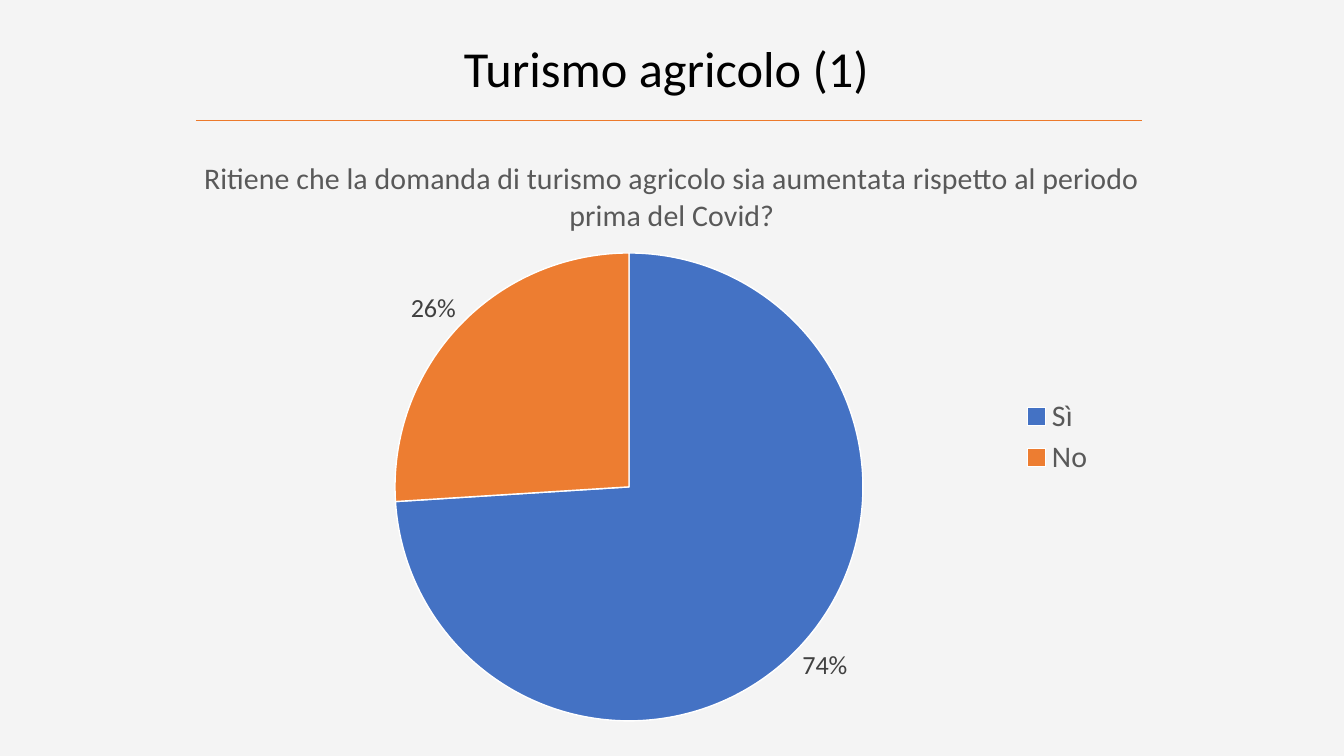
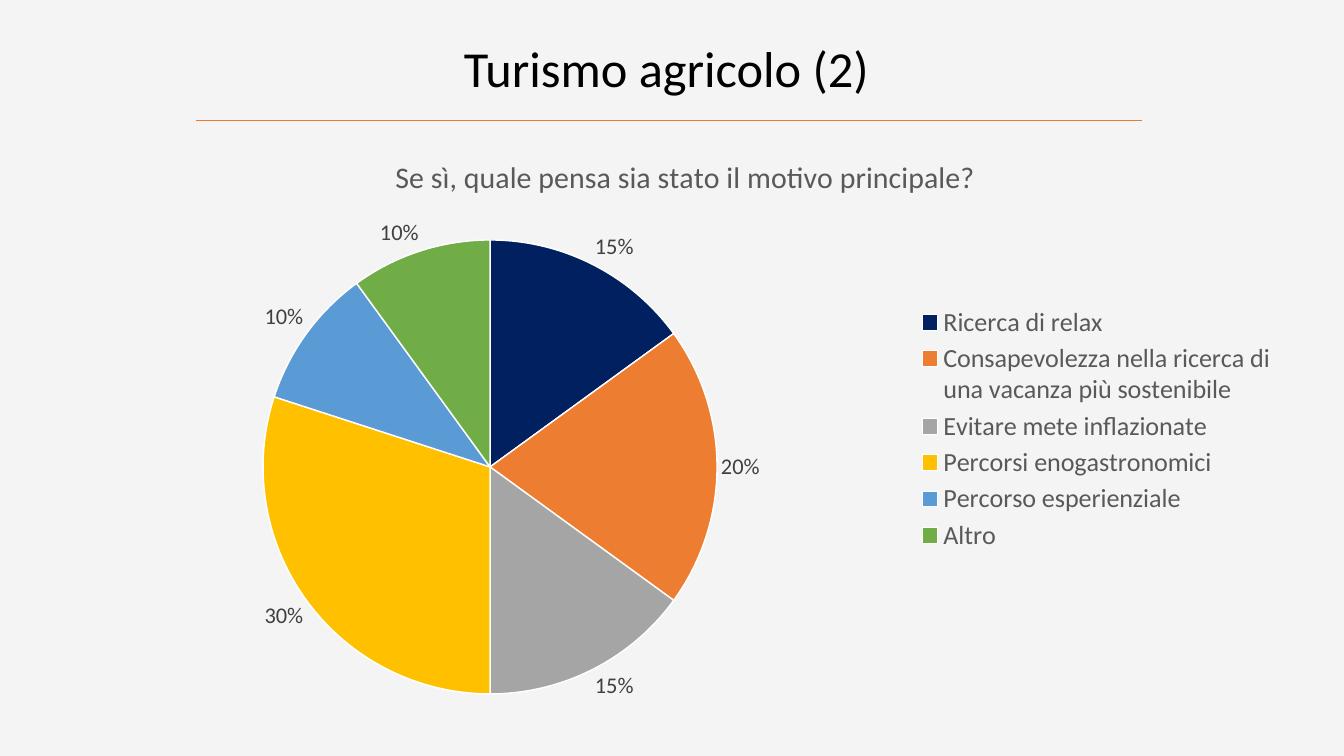
from lxml.etree import SubElement
from pptx import Presentation
from pptx.chart.data import CategoryChartData
from pptx.dml.color import RGBColor
from pptx.enum.chart import XL_CHART_TYPE as ChartType
from pptx.enum.chart import XL_LABEL_POSITION as LabelPosition
from pptx.enum.chart import XL_LEGEND_POSITION as LegendPosition
from pptx.enum.shapes import MSO_CONNECTOR as Connector
from pptx.enum.shapes import MSO_SHAPE as Shape
from pptx.enum.text import MSO_AUTO_SIZE as AutoSize
from pptx.enum.text import PP_ALIGN as Align
from pptx.oxml import parse_xml
from pptx.oxml.ns import nsdecls, qn
from pptx.util import Emu, Pt

SCALE = 914400 / 67.2
WIDTH, HEIGHT = 1344, 756
FONT = "Calibri"
BACKGROUND, PANEL, RULE = "F2F2F2", "F4F4F4", "EC792B"
BLACK, WHITE, TEXT_GREY, LABEL_GREY = "000000", "FFFFFF", "595959", "404040"
BLUE, ORANGE, NAVY = "4472C4", "ED7D31", "002060"
GREY, YELLOW, LIGHT_BLUE, GREEN = "A5A5A5", "FFC000", "5B9BD5", "70AD47"


def px(length):
    """Turn a length in px into EMU."""
    return Emu(round(length * SCALE))


def color(hex_string):
    """Turn a hex string into a colour."""
    return RGBColor.from_string(hex_string)


def style_font(font, size, hex_string):
    """Set typeface, size and colour of a font."""
    font.name = FONT
    font.size = Pt(size)
    font.bold = False
    font.color.rgb = color(hex_string)


def add_panel(slide):
    """Cover the slide with a light panel."""
    panel = slide.shapes.add_shape(Shape.RECTANGLE, 0, 0, px(WIDTH), px(HEIGHT))
    panel.shadow.inherit = False
    panel.fill.solid()
    panel.fill.fore_color.rgb = color(PANEL)
    panel.line.fill.background()


def add_title(slide, text):
    """Add the centred slide title."""
    box = slide.shapes.add_textbox(px(105), px(34), px(1123), px(68))
    frame = box.text_frame
    frame.word_wrap = True
    frame.auto_size = AutoSize.SHAPE_TO_FIT_TEXT
    frame.text = text
    paragraph = frame.paragraphs[0]
    paragraph.alignment = Align.CENTER
    style_font(paragraph.runs[0].font, 54, BLACK)


def add_rule(slide):
    """Add the thin line under the title."""
    rule = slide.shapes.add_connector(
        Connector.STRAIGHT, px(196), px(120), px(1142), px(120)
    )
    rule.line.color.rgb = color(RULE)
    rule.line.width = Pt(0.75)
    SubElement(rule._element.spPr, qn("a:effectLst"))


def set_layout(parent, index, area, frame, inner=False):
    """Place a chart part at a px area inside the chart frame."""
    for old_layout in parent.findall(qn("c:layout")):
        parent.remove(old_layout)
    layout = parse_xml(f"<c:layout {nsdecls('c')}/>")
    manual = SubElement(layout, qn("c:manualLayout"))
    left, top, width, height = area
    frame_left, frame_top, frame_width, frame_height = frame
    settings = {
        "xMode": "edge",
        "yMode": "edge",
        "x": round((left - frame_left) / frame_width, 4),
        "y": round((top - frame_top) / frame_height, 4),
        "w": round(width / frame_width, 4),
        "h": round(height / frame_height, 4),
    }
    if inner:
        settings = {"layoutTarget": "inner", **settings}
    for name, value in settings.items():
        SubElement(manual, qn(f"c:{name}")).set("val", str(value))
    parent.insert(index, layout)


def add_pie(slide, question, answers, frame, pie_area, legend_area, legend_size, label_size):
    """Add a pie chart from (answer, percentage, colour) rows."""
    data = CategoryChartData()
    data.categories = [answer for answer, _, _ in answers]
    data.add_series(question, [value for _, value, _ in answers])
    chart = slide.shapes.add_chart(ChartType.PIE, *map(px, frame), data).chart
    style_font(chart.font, 10, BLACK)

    chart.has_title = True
    chart.chart_title.include_in_layout = False
    chart.chart_title.text_frame.text = question
    title_run = chart.chart_title.text_frame.paragraphs[0].runs[0]
    style_font(title_run.font, 32, TEXT_GREY)

    chart.has_legend = True
    chart.legend.position = LegendPosition.RIGHT
    chart.legend.include_in_layout = False
    style_font(chart.legend.font, legend_size, TEXT_GREY)
    set_layout(chart.legend._element, 1, legend_area, frame)

    plot = chart.plots[0]
    plot.vary_by_categories = True
    set_layout(plot._element.getparent(), 0, pie_area, frame, inner=True)
    series = plot.series[0]
    for index, (_, _, hex_string) in enumerate(answers):
        slice_format = series.points[index].format
        slice_format.fill.solid()
        slice_format.fill.fore_color.rgb = color(hex_string)
        slice_format.line.color.rgb = color(WHITE)
        slice_format.line.width = Pt(1.5)

    labels = series.data_labels
    labels.show_percentage = True
    labels.show_value = False
    labels.number_format = "0%"
    labels.number_format_is_linked = False
    labels.position = LabelPosition.OUTSIDE_END
    style_font(labels.font, label_size, LABEL_GREY)


def add_survey_slide(presentation, title, **pie):
    """Add a slide with a title, a rule and one pie chart."""
    slide = presentation.slides.add_slide(presentation.slide_layouts[6])
    slide.background.fill.solid()
    slide.background.fill.fore_color.rgb = color(BACKGROUND)
    add_panel(slide)
    add_pie(slide, **pie)
    add_title(slide, title)
    add_rule(slide)


def main():
    """Build both survey slides."""
    presentation = Presentation()
    presentation.slide_width = px(WIDTH)
    presentation.slide_height = px(HEIGHT)
    add_survey_slide(
        presentation,
        "Turismo agricolo (1)",
        question="Ritiene che la domanda di turismo agricolo sia aumentata "
        "rispetto al periodo prima del Covid?",
        answers=[("Sì", 74, BLUE), ("No", 26, ORANGE)],
        frame=(67, 136, 1210, 596),
        pie_area=(395, 253, 468, 468),
        legend_area=(1020, 393, 75, 88),
        legend_size=32,
        label_size=28,
    )
    add_survey_slide(
        presentation,
        "Turismo agricolo (2)",
        question="Se sì, quale pensa sia stato il motivo principale?",
        answers=[
            ("Ricerca di relax", 15, NAVY),
            ("Consapevolezza nella ricerca di una vacanza più sostenibile", 20, ORANGE),
            ("Evitare mete inflazionate", 15, GREY),
            ("Percorsi enogastronomici", 30, YELLOW),
            ("Percorso esperienziale", 10, LIGHT_BLUE),
            ("Altro", 10, GREEN),
        ],
        frame=(89, 136, 1193, 587),
        pie_area=(263, 240, 454, 454),
        legend_area=(914, 302, 364, 254),
        legend_size=28,
        label_size=24,
    )
    presentation.save("out.pptx")


if __name__ == "__main__":
    main()
